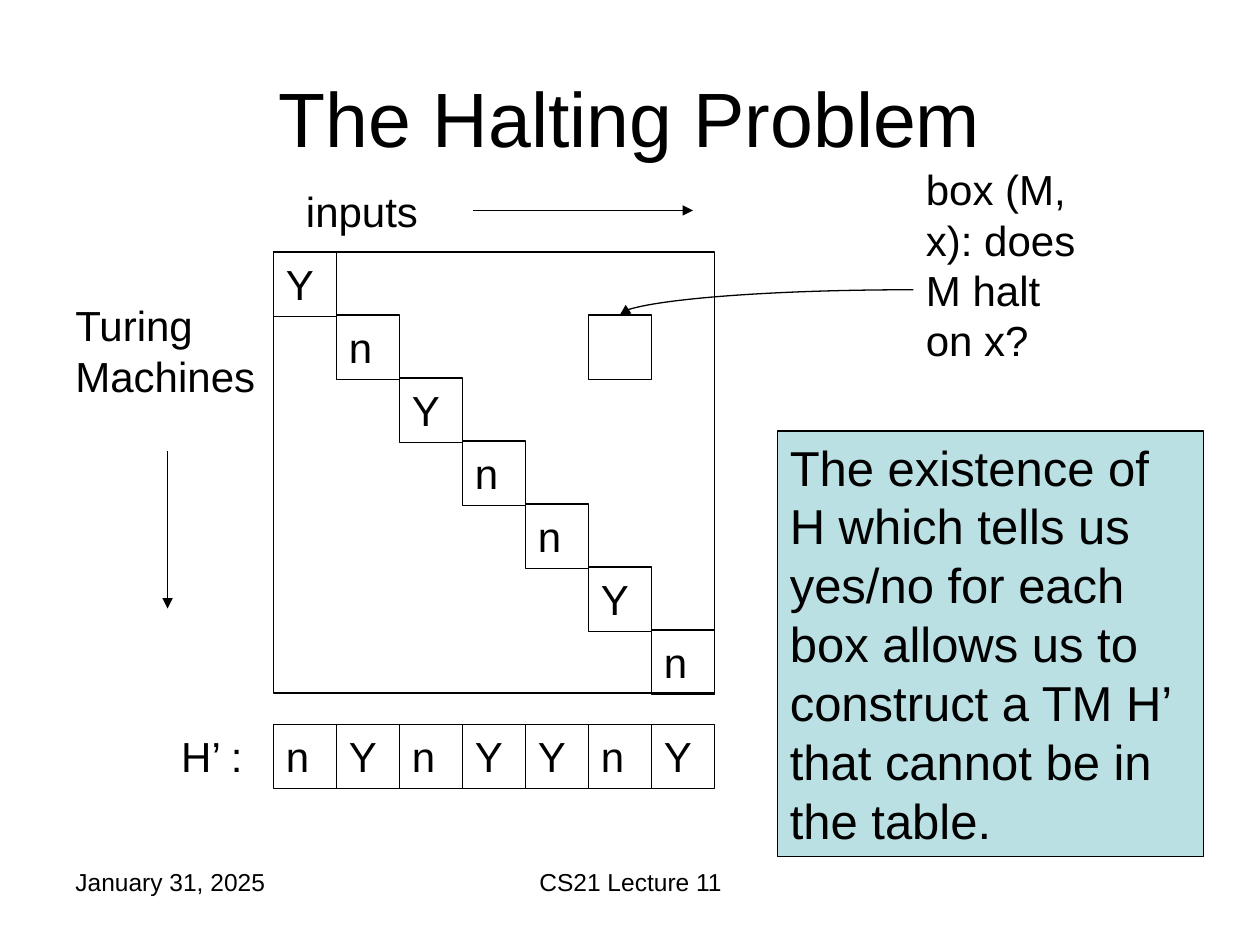
import pptx
import pptx.util
import pptx.dml.color
import pptx.enum.shapes
import pptx.enum.text
import pptx.oxml
from pptx.oxml.ns import qn

Inches = pptx.util.Inches
Pt = pptx.util.Pt
RGBColor = pptx.dml.color.RGBColor
PP_ALIGN = pptx.enum.text.PP_ALIGN
MSO_ANCHOR = pptx.enum.text.MSO_ANCHOR
MSO_SHAPE = pptx.enum.shapes.MSO_SHAPE
MSO_CONNECTOR = pptx.enum.shapes.MSO_CONNECTOR

BLACK = RGBColor(0x00, 0x00, 0x00)
PALE_TEAL = RGBColor(0xBB, 0xE0, 0xE3)
FONT = "Arial"
CELL = Inches(0.5)
CELL_HEIGHT = Inches(0.51)
DIAGONAL = "YnYnnYn"
FLIPPED = {"Y": "n", "n": "Y"}


def write(sp, text, size=24, align=PP_ALIGN.LEFT, anchor=MSO_ANCHOR.TOP):
    tf = sp.text_frame
    tf.word_wrap = True
    tf.vertical_anchor = anchor
    p = tf.paragraphs[0]
    p.alignment = align
    r = p.add_run()
    r.text = text
    r.font.name = FONT
    r.font.size = Pt(size)
    r.font.color.rgb = BLACK


def add_label(s, box, text, **fmt):
    sp = s.shapes.add_textbox(*box)
    write(sp, text, **fmt)
    return sp


def add_box(s, box, text="", fill=None, **fmt):
    sp = s.shapes.add_shape(MSO_SHAPE.RECTANGLE, *box)
    sp.shadow.inherit = False
    if fill is None:
        sp.fill.background()
    else:
        sp.fill.solid()
        sp.fill.fore_color.rgb = fill
    sp.line.color.rgb = BLACK
    sp.line.width = Pt(0.75)
    if text:
        write(sp, text, **fmt)
    return sp


def add_arrow(s, x1, y1, x2, y2, kind=MSO_CONNECTOR.STRAIGHT):
    c = s.shapes.add_connector(kind, x1, y1, x2, y2)
    c.line.color.rgb = BLACK
    c.line.width = Pt(0.75)
    ln = c.line._get_or_add_ln()
    ln.append(pptx.oxml.parse_xml(
        '<a:tailEnd xmlns:a="http://schemas.openxmlformats.org/drawingml/2006/main"'
        ' type="triangle"/>'))
    c._element.spPr.append(pptx.oxml.parse_xml(
        '<a:effectLst xmlns:a="http://schemas.openxmlformats.org/drawingml/2006/main"/>'))
    return c


def place_title(s, left, top, width, height):
    sp = s.shapes.title
    sp.left, sp.top, sp.width, sp.height = left, top, width, height
    write(sp, "The Halting Problem", size=44, align=PP_ALIGN.CENTER,
          anchor=MSO_ANCHOR.MIDDLE)


def place_axes(s, left, top):
    # Inputs run to the right, machines run downwards
    add_label(s, (left + Inches(1.83), top, Inches(1.83), CELL), "inputs")
    y = top + Inches(0.25)
    add_arrow(s, left + Inches(3.25), y, left + Inches(5), y)
    add_label(s, (left, top + Inches(0.91), Inches(1.83), Inches(0.9)),
              "Turing Machines")
    x = left + Inches(0.83)
    add_arrow(s, x, top + Inches(2.16), x, top + Inches(3.41))


def place_table(s, left, top, side):
    # Frame with the diagonal answers
    add_box(s, (left, top, side, side))
    for i, answer in enumerate(DIAGONAL):
        add_box(s, (left + i * CELL, top + i * CELL, CELL, CELL_HEIGHT), answer)
    # Sample box in row 1, column 5
    return add_box(s, (left + 5 * CELL, top + CELL, CELL, CELL_HEIGHT))


def place_flipped_row(s, left, top):
    label_width = Inches(0.83)
    add_label(s, (left - label_width, top, label_width, CELL), "H’ :")
    for i, answer in enumerate(DIAGONAL):
        add_box(s, (left + i * CELL, top, CELL, CELL_HEIGHT), FLIPPED[answer])


def place_question(s, box, target):
    sp = add_label(s, box, "box (M, x): does M halt on x?")
    # Curve from the left side of the question to the top of the sample box
    c = add_arrow(s, sp.left, sp.top + sp.height // 2,
                  target.left + target.width // 2, target.top,
                  kind=MSO_CONNECTOR.CURVE)
    c._element.spPr.find(qn("a:prstGeom")).set("prst", "curvedConnector2")
    c.begin_connect(sp, 1)
    c.end_connect(target, 0)


def place_conclusion(s, box):
    add_box(s, box, "The existence of H which tells us yes/no for each box allows "
            "us to construct a TM H’ that cannot be in the table.",
            fill=PALE_TEAL, size=28)


def place_footer(s, left, top, height):
    add_label(s, (left, top, Inches(2.33), height), "January 31, 2025", size=14)
    add_label(s, (left + Inches(2.92), top, Inches(3.17), height),
              "CS21 Lecture 11", size=14, align=PP_ALIGN.CENTER)


def main():
    prs = pptx.Presentation()
    prs.slide_width, prs.slide_height = Inches(10), Inches(7.5)
    s = prs.slides.add_slide(prs.slide_layouts[5])
    margin, table_left = Inches(0.5), Inches(2.17)

    place_footer(s, margin, Inches(6.83), Inches(0.52))
    place_title(s, margin, Inches(0.3), Inches(9), Inches(1.25))
    place_axes(s, margin, Inches(1.42))
    sample = place_table(s, table_left, Inches(2), 7 * CELL)
    place_flipped_row(s, table_left, Inches(5.75))
    place_question(s, (Inches(7.25), Inches(1.25), Inches(1.42), Inches(2.1)), sample)
    place_conclusion(s, (Inches(6.17), Inches(3.42), Inches(3.38), Inches(3.38)))
    prs.save("out.pptx")


if __name__ == "__main__":
    main()
